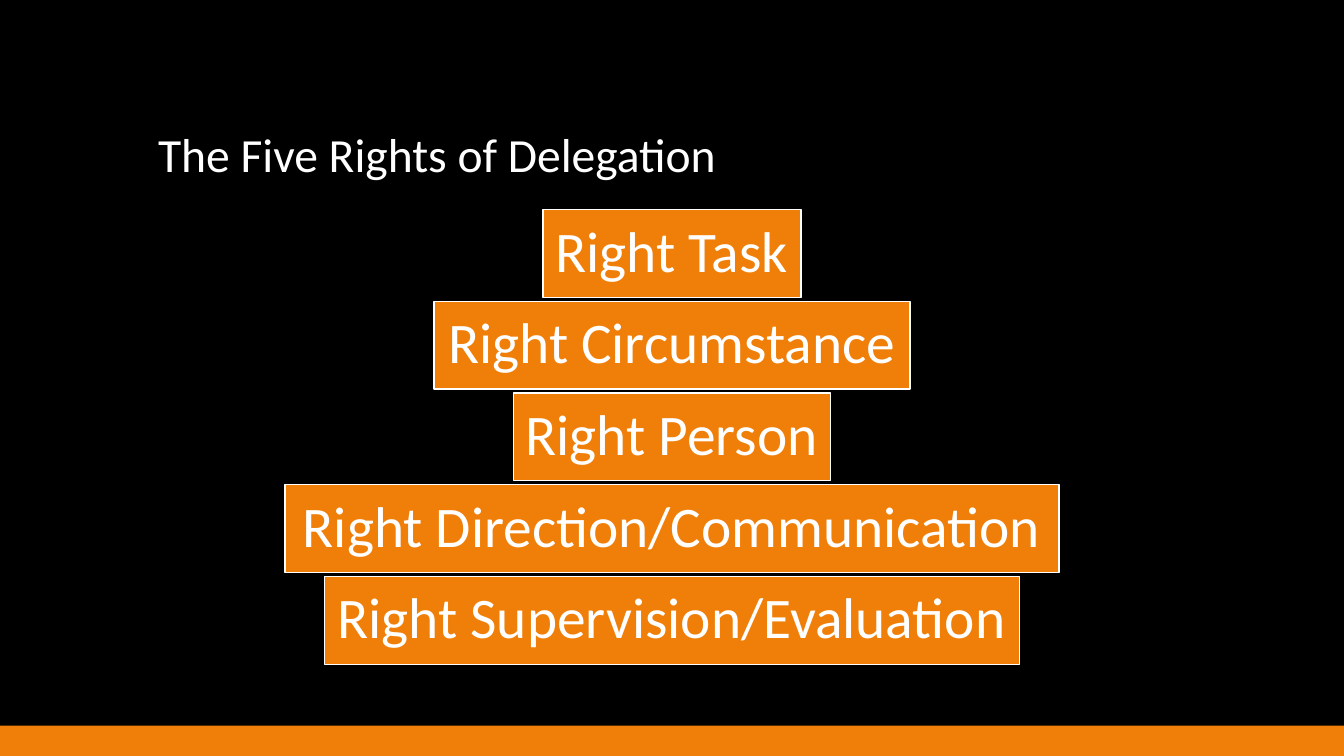
from pptx import Presentation
from pptx.dml.color import RGBColor
from pptx.enum.shapes import MSO_SHAPE
from pptx.enum.text import MSO_ANCHOR, PP_ALIGN
from pptx.util import Inches, Pt

SLIDE_WIDTH = 13.33
SLIDE_HEIGHT = 7.5
ORANGE = "F07F09"
WHITE = "FFFFFF"
BLACK = "000000"

RIGHTS = [
    ("Right Task", 2.56),
    ("Right Circumstance", 4.72),
    ("Right Person", 3.14),
    ("Right Direction/Communication", 7.68),
    ("Right Supervision/Evaluation", 6.89),
]
FIRST_TOP = 2.08
BAR_HEIGHT = 0.87
BAR_STEP = 0.91


def paint(fill, color):
    fill.solid()
    fill.fore_color.rgb = RGBColor.from_string(color)


def write_text(shape, text, size, anchor, alignment, inset):
    frame = shape.text_frame
    frame.word_wrap = True
    frame.vertical_anchor = anchor
    frame.margin_left = frame.margin_right = Inches(inset)
    frame.margin_top = frame.margin_bottom = Inches(min(inset, 0.05))
    paragraph = frame.paragraphs[0]
    paragraph.text = text
    paragraph.alignment = alignment
    paragraph.line_spacing = 0.9
    paragraph.font.name = "Calibri"
    paragraph.font.size = Pt(size)
    paragraph.font.color.rgb = RGBColor.from_string(WHITE)


def add_rectangle(slide, left, top, width, height):
    shape = slide.shapes.add_shape(
        MSO_SHAPE.RECTANGLE, Inches(left), Inches(top), Inches(width), Inches(height)
    )
    shape.shadow.inherit = False
    paint(shape.fill, ORANGE)
    return shape


def add_footer_band(slide):
    band = add_rectangle(slide, 0, 7.2, SLIDE_WIDTH, 0.3)
    band.line.fill.background()


def add_title(slide, text):
    title = slide.shapes.add_textbox(Inches(1.47), Inches(0.51), Inches(10.4), Inches(1.35))
    write_text(title, text, 34, MSO_ANCHOR.BOTTOM, PP_ALIGN.LEFT, 0.1)


def add_right_bar(slide, text, top, width):
    bar = add_rectangle(slide, (SLIDE_WIDTH - width) / 2, top, width, BAR_HEIGHT)
    paint(bar.line.fill, WHITE)
    bar.line.width = Pt(1)
    write_text(bar, text, 41, MSO_ANCHOR.MIDDLE, PP_ALIGN.CENTER, 0.11)


def main():
    presentation = Presentation()
    presentation.slide_width = Inches(SLIDE_WIDTH)
    presentation.slide_height = Inches(SLIDE_HEIGHT)
    slide = presentation.slides.add_slide(presentation.slide_layouts[6])
    paint(slide.background.fill, BLACK)
    add_footer_band(slide)
    add_title(slide, "The Five Rights of Delegation")
    for index, (text, width) in enumerate(RIGHTS):
        add_right_bar(slide, text, FIRST_TOP + index * BAR_STEP, width)
    presentation.save("out.pptx")


if __name__ == "__main__":
    main()
